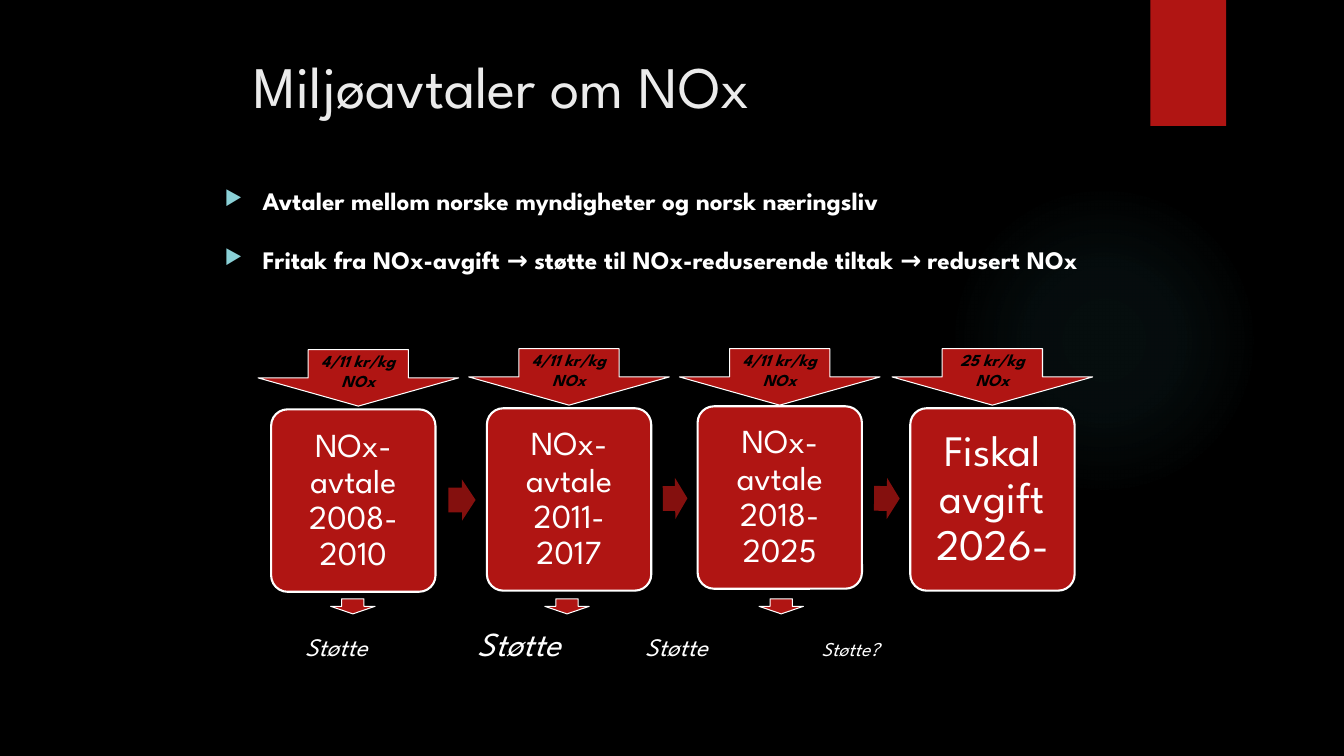
from math import atan2, degrees

from pptx import Presentation
from pptx.dml.color import RGBColor
from pptx.enum.shapes import MSO_SHAPE
from pptx.enum.text import MSO_ANCHOR, PP_ALIGN
from pptx.oxml import parse_xml
from pptx.oxml.ns import qn
from pptx.util import Pt

FONT = "League Spartan"
BLACK = RGBColor(0x00, 0x00, 0x00)
WHITE = RGBColor(0xFF, 0xFF, 0xFF)
TITLE_GREY = RGBColor(0xEB, 0xEB, 0xEB)
RED = RGBColor(0xB0, 0x15, 0x13)
DARK_RED = RGBColor(0x84, 0x10, 0x0E)
BULLET_BLUE = RGBColor(0x8A, 0xD0, 0xD6)
GLOW_TEAL = RGBColor(0x50, 0xB9, 0xC1)
NS = 'xmlns:a="http://schemas.openxmlformats.org/drawingml/2006/main"'

# Agreement periods: card left, card top, fee arrow left, fee arrow top, text, size, inset, fee
PERIODS = [
    (193.7, 292.4, 184.3, 249.8, "NOx-avtale 2008-2010", 24, 7.2, "4/11 kr/kg NOx"),
    (347.8, 291.6, 334.8, 249.1, "NOx-avtale 2011-2017", 24, 7.2, "4/11 kr/kg NOx"),
    (498.3, 290.2, 485.3, 249.1, "NOx-avtale 2018-2025", 24, 7.2, "4/11 kr/kg NOx"),
    (650.2, 291.6, 637.2, 249.1, "Fiskal avgift 2026-", 31, 9.4, "25 kr/kg NOx"),
]
CARD_W, CARD_H = 117.4, 130.3


def add_text(p, text, size, color=WHITE, bold=False, italic=False, align=None):
    if align is not None:
        p.alignment = align
    r = p.add_run()
    r.text = text
    r.font.name, r.font.size = FONT, Pt(size)
    r.font.bold, r.font.italic = bold, italic
    r.font.color.rgb = color


def add_shape(slide, kind, box, fill=RED, line=0):
    sp = slide.shapes.add_shape(kind, *[Pt(v) for v in box])
    sp.shadow.inherit = False
    sp.fill.solid()
    sp.fill.fore_color.rgb = fill
    if line:
        sp.line.color.rgb = WHITE
        sp.line.width = Pt(line)
    else:
        sp.line.fill.background()
    sp.text_frame.word_wrap = True
    return sp


def add_textbox(slide, box):
    tf = slide.shapes.add_textbox(*[Pt(v) for v in box]).text_frame
    tf.word_wrap = True
    return tf


def add_backdrop(slide, glow_box, ribbon_box):
    slide.background.fill.solid()
    slide.background.fill.fore_color.rgb = BLACK

    # Soft radial glow
    spPr = add_shape(slide, MSO_SHAPE.OVAL, glow_box)._element.spPr
    stops = "".join(
        f'<a:gs pos="{pos}000"><a:srgbClr val="{GLOW_TEAL}">'
        f'<a:alpha val="{alpha}000"/></a:srgbClr></a:gs>'
        for pos, alpha in [(0, 7), (36, 6), (69, 0)])
    spPr.replace(spPr.find(qn("a:solidFill")), parse_xml(
        f'<a:gradFill {NS}><a:gsLst>{stops}</a:gsLst><a:path path="circle">'
        '<a:fillToRect l="50000" t="50000" r="50000" b="50000"/></a:path></a:gradFill>'))

    # Ribbon with a slight shadow
    spPr = add_shape(slide, MSO_SHAPE.RECTANGLE, ribbon_box)._element.spPr
    spPr.find(qn("a:effectLst")).append(parse_xml(
        f'<a:outerShdw {NS} blurRad="{Pt(3)}" dist="{Pt(2)}" dir="5400000" rotWithShape="0">'
        f'<a:srgbClr val="{BLACK}"><a:alpha val="45000"/></a:srgbClr></a:outerShdw>'))


def add_title(slide, box, text):
    sp = slide.shapes.title
    sp.left, sp.top, sp.width, sp.height = [Pt(v) for v in box]
    tf = sp.text_frame
    tf.word_wrap = True
    tf.vertical_anchor = MSO_ANCHOR.TOP
    add_text(tf.paragraphs[0], text, 42, TITLE_GREY, align=PP_ALIGN.LEFT)


def add_bullets(slide, box, lines):
    tf = add_textbox(slide, box)
    for i, text in enumerate(lines):
        p = tf.add_paragraph() if i else tf.paragraphs[0]
        p.line_spacing = 1.5
        p.space_before = Pt(10 if i else 0)
        pPr = p._p.get_or_add_pPr()
        pPr.set("marL", str(Pt(27)))
        pPr.set("indent", str(Pt(-27)))
        for xml in (f'<a:buClr {NS}><a:srgbClr val="{BULLET_BLUE}"/></a:buClr>',
                    f'<a:buSzPct {NS} val="80000"/>',
                    f'<a:buChar {NS} char="▶"/>'):
            pPr.append(parse_xml(xml))
        add_text(p, text, 18, bold=True)


def add_card(slide, box, text, size, inset):
    sp = add_shape(slide, MSO_SHAPE.ROUNDED_RECTANGLE, box, line=1.5)
    sp.adjustments[0] = 0.1
    tf = sp.text_frame
    tf.margin_left = tf.margin_right = tf.margin_top = tf.margin_bottom = Pt(inset)
    tf.paragraphs[0].line_spacing = 0.9
    add_text(tf.paragraphs[0], text, size, align=PP_ALIGN.CENTER)


def add_step_arrow(slide, start, end):
    """Arrow in the gap between two cards, tilted along the line joining them."""
    (x1, y1), (x2, y2) = start, end
    gap, height = x2 - x1 - CARD_W, 29.5
    top = (y1 + y2 + CARD_H - height) / 2
    sp = add_shape(slide, MSO_SHAPE.RIGHT_ARROW,
                   (x1 + CARD_W + 0.25 * gap, top, 0.53 * gap, height), DARK_RED)
    sp.adjustments[0] = 0.6
    sp.rotation = degrees(atan2(y2 - y1, x2 - x1))


def add_timeline(slide):
    for left, top, _, _, text, size, inset, _ in PERIODS:
        add_card(slide, (left, top, CARD_W, CARD_H), text, size, inset)
    for before, after in zip(PERIODS, PERIODS[1:]):
        add_step_arrow(slide, before[:2], after[:2])

    # Fee arrows above the cards
    for _, _, left, top, _, _, _, fee in PERIODS:
        sp = add_shape(slide, MSO_SHAPE.DOWN_ARROW, (left, top, 143.3, 40.3), line=0.75)
        add_text(sp.text_frame.paragraphs[0], fee, 12, BLACK, bold=True, italic=True,
                 align=PP_ALIGN.CENTER)

    # Small arrows below the agreements
    for i in range(3):
        add_shape(slide, MSO_SHAPE.DOWN_ARROW, (236.2 + 153 * i, 427.7, 31.7, 10.8), line=0.75)


def add_support_row(slide, box):
    tf = add_textbox(slide, box)
    tf.margin_left = Pt(35)
    p = tf.paragraphs[0]
    tabs = "".join(f'<a:tab pos="{Pt(x)}" algn="l"/>' for x in (123, 243, 369))
    p._p.get_or_add_pPr().append(parse_xml(f"<a:tabLst {NS}>{tabs}</a:tabLst>"))
    for text, size in [("Støtte", 18), ("\tStøtte", 24), ("\tStøtte", 18), ("\tStøtte?", 14)]:
        add_text(p, text, size, italic=True)


def main():
    prs = Presentation()
    prs.slide_width, prs.slide_height = Pt(960), Pt(540)
    slide = prs.slides.add_slide(prs.slide_layouts[5])
    add_backdrop(slide, (677.5, 131.8, 221.8, 221.8), (821.8, 0, 54, 90))
    add_title(slide, (174.2, 31.7, 578.2, 90.7), "Miljøavtaler om NOx")
    add_bullets(slide, (153.4, 118.1, 666, 203.8), [
        "Avtaler mellom norske myndigheter og norsk næringsliv",
        "Fritak fra NOx-avgift → støtte til NOx-reduserende tiltak → redusert NOx",
    ])
    add_timeline(slide)
    add_support_row(slide, (182.9, 441.4, 636.5, 36))
    prs.save("out.pptx")


if __name__ == "__main__":
    main()
